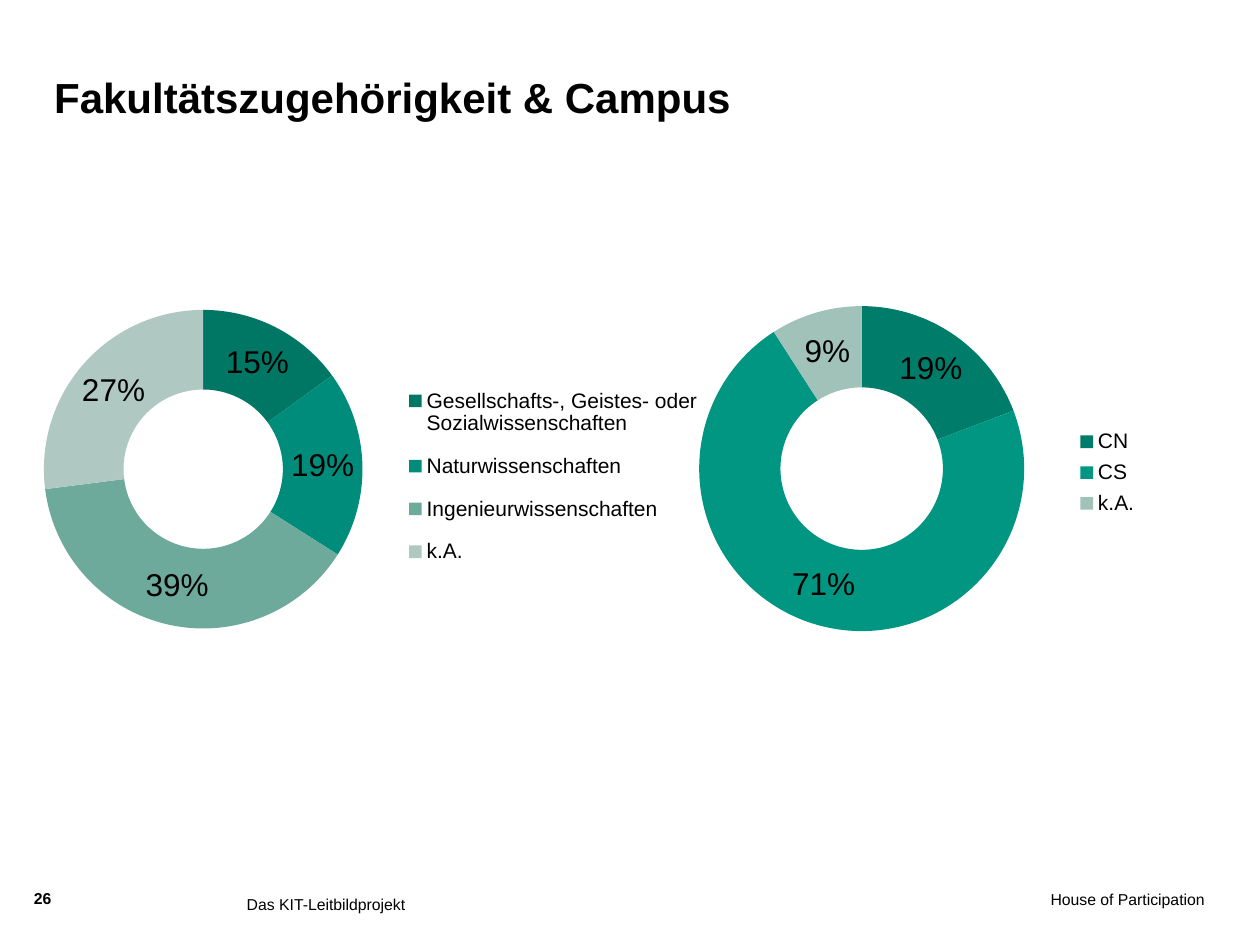
from dataclasses import dataclass

import pptx
import pptx.chart.data
import pptx.dml.color
import pptx.enum.chart
import pptx.enum.text
import pptx.oxml
import pptx.oxml.ns
import pptx.util

Inches = pptx.util.Inches
Align = pptx.enum.text.PP_ALIGN
Box = tuple[float, float, float, float]


@dataclass(frozen=True)
class Theme:
    font: str = "Arial"
    ink: str = "000000"
    title: int = 24
    label: int = 18
    legend: int = 12
    foot: int = 9


@dataclass(frozen=True)
class Note:
    text: str
    box: Box
    align: Align = Align.LEFT
    bold: bool = False
    inset: tuple[float, float] = (0, 0)


@dataclass(frozen=True)
class Ring:
    """A doughnut chart; plot and legend boxes are in inches inside the chart."""
    left: float
    names: list[str]
    shares: list[int]
    fills: list[str]
    plot: Box
    legend: Box


THEME = Theme()
TOP, WIDTH, HEIGHT = 2.25, 5.7, 3

NOTES = [
    Note("House of Participation", (6.57, 7.06, 2.99, 0.39), Align.RIGHT),
    Note("26", (0.27, 7.05, 0.36, 0.24), bold=True),
    Note("Das KIT-Leitbildprojekt", (1.86, 7.05, 4.65, 0.39), inset=(0.1, 0.05)),
]
RINGS = [
    Ring(0,
         ["Gesellschafts-, Geistes- oder Sozialwissenschaften",
          "Naturwissenschaften", "Ingenieurwissenschaften", "k.A."],
         [15, 19, 39, 27],
         ["007765", "008C7A", "6DAA9C", "AFC9C2"],
         (0.35, 0.21, 2.53, 2.53), (3.18, 0.68, 2.42, 1.7)),
    Ring(4.3, ["CN", "CS", "k.A."], [19, 71, 9],
         ["007D6A", "009682", "A1C2B9"],
         (1.25, 0.18, 2.58, 2.58), (4.19, 1.1, 0.6, 0.8)),
]


def color(code: str) -> pptx.dml.color.RGBColor:
    return pptx.dml.color.RGBColor.from_string(code)


def style(font, size: int, bold: bool = False) -> None:
    font.name = THEME.font
    font.size = pptx.util.Pt(size)
    font.bold = bold
    font.color.rgb = color(THEME.ink)


def fill_text(shape, note: Note, size: int) -> None:
    frame = shape.text_frame
    frame.word_wrap = True
    frame.margin_left = frame.margin_right = Inches(note.inset[0])
    frame.margin_top = frame.margin_bottom = Inches(note.inset[1])
    frame.text = note.text
    par = frame.paragraphs[0]
    par.alignment = note.align
    style(par.runs[0].font, size, note.bold)


def add_title(slide) -> None:
    box = (0.43, 0.36, 7.56, 0.61)
    title = slide.shapes.title
    title.left, title.top, title.width, title.height = map(Inches, box)
    fill_text(title, Note("Fakultätszugehörigkeit & Campus", box, bold=True),
              THEME.title)
    title.text_frame.vertical_anchor = pptx.enum.text.MSO_ANCHOR.BOTTOM


def add_note(slide, note: Note) -> None:
    fill_text(slide.shapes.add_textbox(*map(Inches, note.box)), note, THEME.foot)


def make_layout(box: Box, inner: bool = False):
    """Turn a box in inches into a manual chart layout."""
    x, y, w, h = box
    target = '<c:layoutTarget val="inner"/>' if inner else ""
    return pptx.oxml.parse_xml(
        f'<c:layout {pptx.oxml.ns.nsdecls("c")}><c:manualLayout>{target}'
        '<c:xMode val="edge"/><c:yMode val="edge"/>'
        f'<c:x val="{x / WIDTH:.3f}"/><c:y val="{y / HEIGHT:.3f}"/>'
        f'<c:w val="{w / WIDTH:.3f}"/><c:h val="{h / HEIGHT:.3f}"/>'
        '</c:manualLayout></c:layout>')


def place_parts(chart, ring: Ring) -> None:
    tag = pptx.oxml.ns.qn
    area = chart._chartSpace.chart.plotArea
    for old in area.findall(tag("c:layout")):
        area.remove(old)
    area.insert(0, make_layout(ring.plot, inner=True))
    legend = chart.legend._element
    for old in legend.findall(tag("c:layout")):
        legend.remove(old)
    legend.find(tag("c:legendPos")).addnext(make_layout(ring.legend))


def add_ring(slide, ring: Ring) -> None:
    data = pptx.chart.data.CategoryChartData()
    data.categories = ring.names
    data.add_series("Series 1", ring.shares)
    chart = slide.shapes.add_chart(
        pptx.enum.chart.XL_CHART_TYPE.DOUGHNUT,
        *map(Inches, (ring.left, TOP, WIDTH, HEIGHT)), data).chart
    chart.has_title = False
    style(chart.font, THEME.label)

    chart.has_legend = True
    chart.legend.position = pptx.enum.chart.XL_LEGEND_POSITION.RIGHT
    chart.legend.include_in_layout = False
    style(chart.legend.font, THEME.legend)

    plot = chart.plots[0]
    plot.vary_by_categories = True
    plot.has_data_labels = True
    labels = plot.data_labels
    labels.show_percentage = False
    labels.show_value = True
    labels.number_format = '0"%"'
    labels.number_format_is_linked = False
    style(labels.font, THEME.label)
    for i, code in enumerate(ring.fills):
        form = plot.series[0].points[i].format
        form.fill.solid()
        form.fill.fore_color.rgb = color(code)
        form.line.fill.background()
    place_parts(chart, ring)


def main() -> None:
    deck = pptx.Presentation()
    deck.slide_width, deck.slide_height = Inches(10), Inches(7.5)
    slide = deck.slides.add_slide(deck.slide_layouts[5])
    for note in NOTES:
        add_note(slide, note)
    add_title(slide)
    for ring in RINGS:
        add_ring(slide, ring)
    deck.save("out.pptx")


if __name__ == "__main__":
    main()
